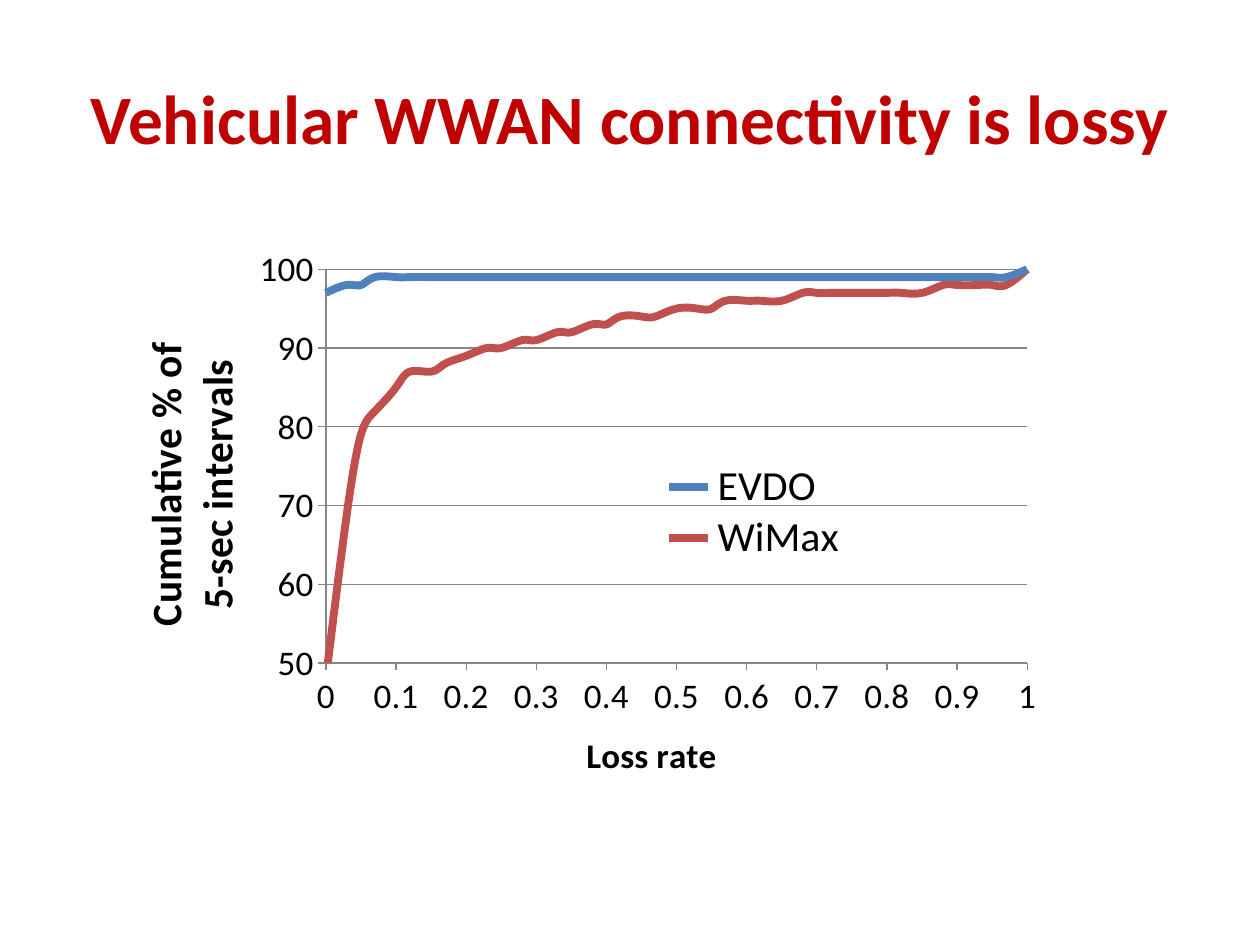
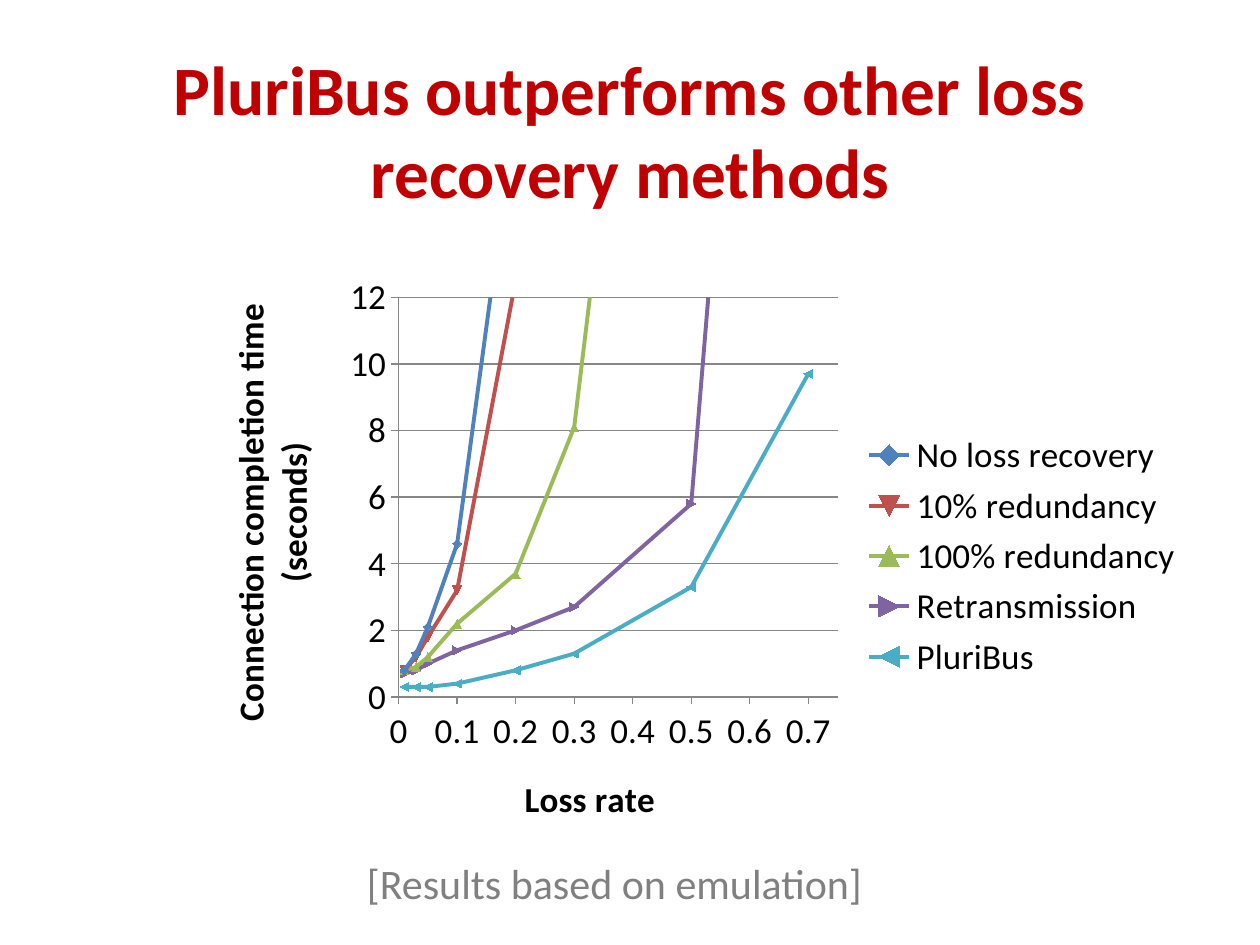
import lxml.etree
import pptx
import pptx.chart.data
import pptx.dml.color
import pptx.enum.chart
import pptx.enum.text
import pptx.oxml
import pptx.oxml.ns
import pptx.util

Pt = pptx.util.Pt
KIND = pptx.enum.chart.XL_CHART_TYPE
ALIGN = pptx.enum.text.PP_ALIGN
SCALE = 914400 / 126  # EMU in one px
FONT = "Calibri"
RED, GREY, LINE, BLACK = "C00000", "808080", "868686", "000000"
HUES = ["4F81BD", "C0504D", "9BBB59", "8064A2", "4BACC6"]
tag = pptx.oxml.ns.qn


def rgb(code):
    return pptx.dml.color.RGBColor.from_string(code)


def place(node, index, **spots):
    """Give a chart part a manual layout, as shares of the chart."""
    for old in node.findall(tag("c:layout")):
        node.remove(old)
    layout = lxml.etree.Element(tag("c:layout"))
    manual = lxml.etree.SubElement(layout, tag("c:manualLayout"))
    if "w" in spots and index == 0:
        lxml.etree.SubElement(manual, tag("c:layoutTarget"), val="inner")
    for key in "xy":
        lxml.etree.SubElement(manual, tag(f"c:{key}Mode"), val="edge")
    for key, share in spots.items():
        lxml.etree.SubElement(manual, tag(f"c:{key}"), val=str(share))
    node.insert(index, layout)


# Loss rates: even steps for the first chart, chosen rates for the second
steps = [round(i / 40, 2) for i in range(41)]
rates = [0.7, 0.5, 0.3, 0.2, 0.1, 0.05, 0.03, 0.01]

evdo = [97, 98, 98] + [99] * 37 + [100]
wimax = [48, 69, 79, 82, 85, 87, 87, 88, 89, 90, 90, 91, 91, 92, 92, 93, 93,
         94, 94, 94, 95, 95, 95] + [96] * 4 + [97] * 8 + [98] * 5 + [100]

pages = [
    dict(title="Vehicular WWAN connectivity is lossy", high=158,
         box=(126, 242, 966, 546), kind=KIND.XY_SCATTER_SMOOTH_NO_MARKERS,
         rates=steps, width=4.5, size=24,
         label="Cumulative % of\n5-sec intervals",
         across=(None, 1, 0.1), up=(50, 100, 10),
         plot=dict(x=0.207, y=0.051, w=0.726, h=0.734),
         xname=dict(x=0.47, y=0.9), yname=dict(x=0.01, y=0.19),
         legend=dict(x=0.55, y=0.41, w=0.2, h=0.19),
         series={"EVDO": evdo, "WiMax": wimax}),
    dict(title="PluriBus outperforms other loss recovery methods", high=183,
         box=(199, 262, 998, 588), kind=KIND.XY_SCATTER_LINES,
         rates=rates, width=2.25, size=20,
         label="Connection completion time (seconds)",
         across=(0, 0.75, 0.1), up=(None, 12, 2),
         plot=dict(x=0.2, y=0.06, w=0.44, h=0.68),
         xname=dict(x=0.32, y=0.86), yname=dict(x=0.02, y=0.06),
         legend=None,
         series={
             "No loss recovery": [92.5, 68.5, 34.5, 17.6, 4.6, 2.1, 1.3, 0.8],
             "10% redundancy": [91.5, 67.2, 29.2, 12.5, 3.2, 1.8, 1.2, 0.8],
             "100% redundancy": [66.2, 37.2, 8.1, 3.7, 2.2, 1.2, 0.9, 0.8],
             "Retransmission": [48.4, 5.8, 2.7, 2, 1.4, 1, 0.8, 0.7],
             "PluriBus": [9.7, 3.3, 1.3, 0.8, 0.4, 0.3, 0.3, 0.3]}),
]

deck = pptx.Presentation()
deck.slide_width, deck.slide_height = [round(n * SCALE) for n in (1260, 945)]

for page in pages:
    slide = deck.slides.add_slide(deck.slide_layouts[5])

    # Title
    title = slide.shapes.title
    title.left, title.top, title.width, title.height = [
        round(n * SCALE) for n in (63, 38, 1134, page["high"])]
    title.text_frame.text = page["title"]
    title.text_frame.vertical_anchor = pptx.enum.text.MSO_ANCHOR.MIDDLE
    para = title.text_frame.paragraphs[0]
    para.alignment = ALIGN.CENTER
    para.font.name, para.font.size, para.font.bold = FONT, Pt(39.6), True
    para.font.color.rgb = rgb(RED)

    # Chart
    data = pptx.chart.data.XyChartData()
    for name, values in page["series"].items():
        row = data.add_series(name)
        for rate, value in zip(page["rates"], values):
            row.add_data_point(rate, value)
    box = [round(n * SCALE) for n in page["box"]]
    chart = slide.shapes.add_chart(page["kind"], *box, data).chart
    chart.has_title = False
    chart.font.name, chart.font.size = FONT, Pt(10)
    chart.font.color.rgb = rgb(BLACK)
    plot = chart.plots[0]
    plot.vary_by_categories = False

    # Curves
    smooth = page["kind"] == KIND.XY_SCATTER_SMOOTH_NO_MARKERS
    for curve, hue in zip(plot.series, HUES):
        curve.format.line.color.rgb = rgb(hue)
        curve.format.line.width = Pt(page["width"])
        curve._element.find(tag("c:smooth")).set("val", str(int(smooth)))
        if not smooth:
            curve.marker.size = 5
            curve.marker.format.fill.solid()
            curve.marker.format.fill.fore_color.rgb = rgb(hue)
            curve.marker.format.line.color.rgb = rgb(hue)

    # Axes
    axes = [
        (chart.category_axis, "Loss rate", 20, page["across"], page["xname"], False),
        (chart.value_axis, page["label"], page["size"], page["up"], page["yname"], True),
    ]
    for axis, label, size, (low, top, step), spot, upright in axes:
        axis.minimum_scale, axis.maximum_scale, axis.major_unit = low, top, step
        axis.major_tick_mark = pptx.enum.chart.XL_TICK_MARK.OUTSIDE
        axis.minor_tick_mark = pptx.enum.chart.XL_TICK_MARK.NONE
        axis.has_major_gridlines = upright
        axis.tick_labels.font.size = Pt(20)
        axis.tick_labels.number_format = "General"
        axis.tick_labels.number_format_is_linked = False
        axis.format.line.color.rgb = rgb(LINE)
        axis.format.line.width = Pt(0.75)
        frame = axis.axis_title.text_frame
        frame.text = label
        for para in frame.paragraphs:
            font = para.font
            font.name, font.size, font.bold = FONT, Pt(size), True
            font.color.rgb = rgb(BLACK)
        if upright:
            axis.major_gridlines.format.line.color.rgb = rgb(LINE)
            axis.major_gridlines.format.line.width = Pt(0.75)
            body = frame._txBody.bodyPr
            body.set("rot", "-5400000")
            body.set("vert", "horz")
        place(axis.axis_title._element, 1, **spot)

    # Legend and plot area
    chart.has_legend = True
    legend = chart.legend
    legend.position = pptx.enum.chart.XL_LEGEND_POSITION.RIGHT
    legend.include_in_layout = False
    legend.font.size, legend.font.name = Pt(page["size"]), FONT
    if page["legend"]:
        place(legend._element, 1, **page["legend"])
    place(chart._chartSpace.chart.plotArea, 0, **page["plot"])

# Caption under the second chart
note = slide.shapes.add_textbox(*[round(n * SCALE) for n in (315, 851, 599, 63)])
note.text_frame.word_wrap = True
note.text_frame.text = "[Results based on emulation]"
para = note.text_frame.paragraphs[0]
para.alignment = ALIGN.CENTER
para.font.name, para.font.size = FONT, Pt(24)
para.font.color.rgb = rgb(GREY)

deck.save("out.pptx")
